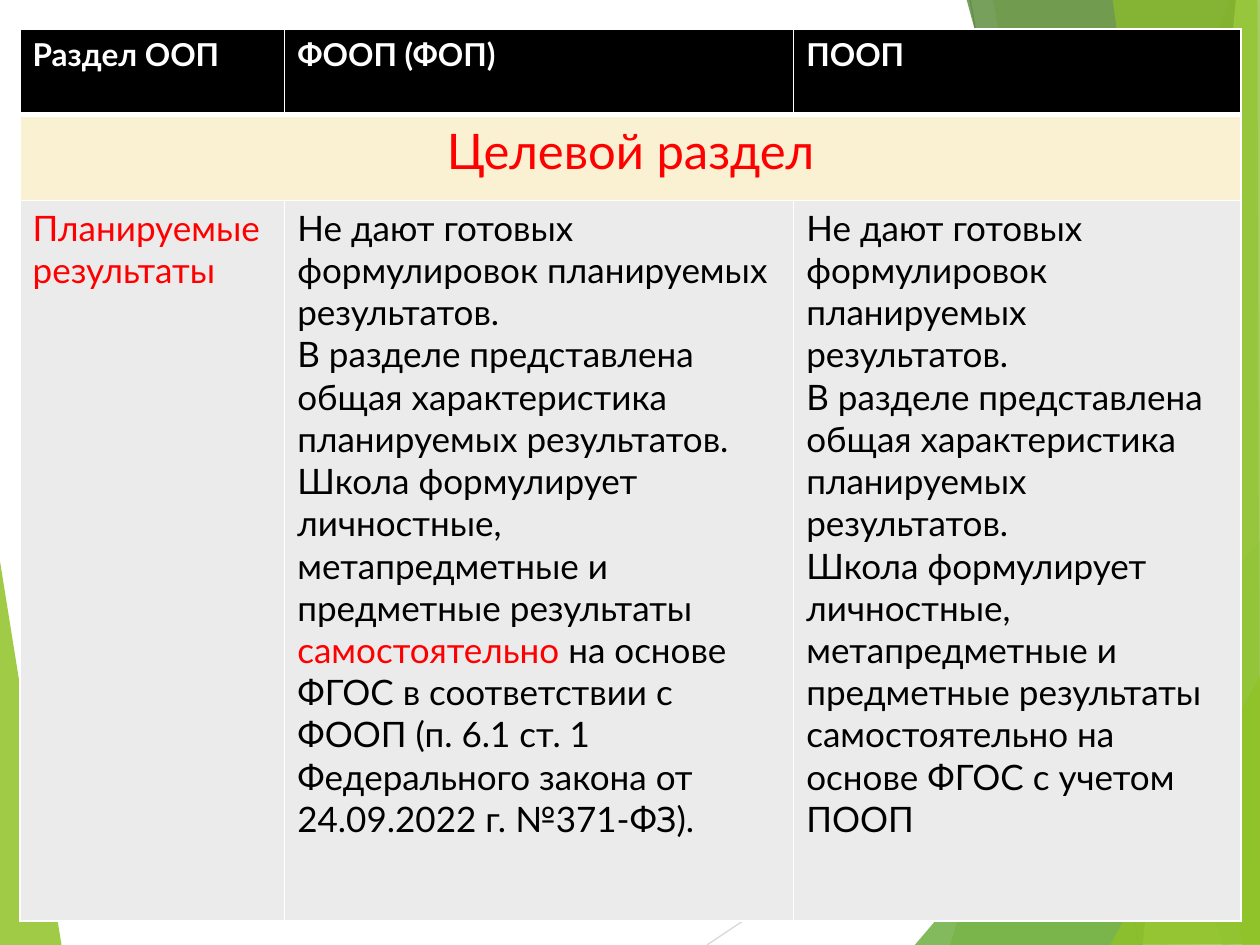
"""Build the slide comparing the target sections of two school programmes."""
from lxml import etree
from pptx import Presentation
from pptx.dml.color import RGBColor
from pptx.enum import shapes, text
from pptx.oxml import ns
from pptx.util import Inches, Pt

WHITE = RGBColor(0xFF, 0xFF, 0xFF)
BLACK = RGBColor(0, 0, 0)
RED = RGBColor(0xFF, 0, 0)
CREAM = RGBColor(0xFA, 0xF1, 0xD2)
PALE_GREY = RGBColor(0xEB, 0xEB, 0xEB)
LIGHT_GREY = RGBColor(0xD9, 0xD9, 0xD9)
MID_GREY = RGBColor(0xBF, 0xBF, 0xBF)
LIME = RGBColor(0x90, 0xC2, 0x26)
GREEN = RGBColor(0x54, 0xA0, 0x21)
DARK_GREEN = RGBColor(0x3F, 0x78, 0x19)
PALE_LIME = RGBColor(0xC0, 0xE4, 0x74)
FONT = "Lato"

LEFT_FACET = ([(-0.01, 4.39), (0.49, 7.51), (-0.01, 7.5)], LIME, 85)
GUIDES = [
    ((5.61, 7.5), (10.01, 4.57), LIGHT_GREY),
    ((7.7, 0), (9.04, 7.5), MID_GREY),
]
RIGHT_FACETS = [
    ([(9.75, 0), (7.54, 7.5), (10.02, 7.51), (10.01, 0.01)], LIME, 30),
    ([(7.88, -0.01), (9.19, 7.5), (10.01, 7.5), (10.01, -0.01)], LIME, 20),
    ([(7.26, 7.5), (10, 4.29), (10.01, 7.5)], GREEN, 72),
    ([(7.67, -0.01), (9.7, 7.5), (10.01, 7.49), (10.01, -0.01)], DARK_GREEN, 70),
    ([(9.81, -0.01), (9.07, 7.5), (10.01, 7.5), (10, -0.01)], PALE_LIME, 70),
    ([(8.83, -0.01), (9.86, 7.5), (10, 7.5), (9.98, -0.01)], LIME, 65),
    ([(8.81, 7.5), (10.01, 5.35), (10.01, 7.49)], LIME, 80),
]

COLUMNS = [2.1, 4.04, 3.55]
ROWS = [0.68, 0.68, 5.72]
HEADERS = ["Раздел ООП", "ФООП (ФОП)", "ПООП"]
SECTION = "Целевой раздел"
TOPIC = "Планируемые результаты"
COMMON = [
    [("Не дают готовых формулировок планируемых результатов.", BLACK)],
    [("В разделе представлена общая характеристика планируемых результатов.", BLACK)],
]
SCHOOL = "Школа формулирует личностные, метапредметные и предметные результаты "
FEDERAL = COMMON + [[
    (SCHOOL, BLACK),
    ("самостоятельно ", RED),
    ("на основе ФГОС в соответствии с ФООП (п. 6.1 ст. 1 Федерального закона "
     "от 24.09.2022 г. №371-ФЗ).", BLACK),
]]
EXEMPLARY = COMMON + [
    [(SCHOOL + "самостоятельно на основе ФГОС с учетом ПООП", BLACK)],
]


def add_facet(slide, points, color, opacity):
    corners = [(Inches(x), Inches(y)) for x, y in points]
    builder = slide.shapes.build_freeform(*corners[0])
    builder.add_line_segments(corners[1:], close=True)
    shape = builder.convert_to_shape()
    shape.shadow.inherit = False
    shape.line.fill.background()
    shape.fill.solid()
    shape.fill.fore_color.rgb = color
    color_element = next(shape.element.iter(ns.qn("a:srgbClr")))
    etree.SubElement(color_element, ns.qn("a:alpha"), val=str(opacity * 1000))


def add_guide(slide, start, end, color):
    connector = slide.shapes.add_connector(
        shapes.MSO_CONNECTOR.STRAIGHT, *map(Inches, start + end))
    connector.line.color.rgb = color
    connector.line.width = Pt(0.75)
    etree.SubElement(connector.element.spPr, ns.qn("a:effectLst"))


def set_borders(cell, bottom=1):
    properties = cell._tc.get_or_add_tcPr()
    for side, width in (("L", 1), ("R", 1), ("T", 1), ("B", bottom)):
        line = etree.SubElement(properties, ns.qn(f"a:ln{side}"), w=str(Pt(width)))
        fill = etree.SubElement(line, ns.qn("a:solidFill"))
        etree.SubElement(fill, ns.qn("a:srgbClr"), val=str(WHITE))


def fill_cell(cell, paragraphs, size, fill, bold=False, alignment=text.PP_ALIGN.LEFT):
    cell.fill.solid()
    cell.fill.fore_color.rgb = fill
    frame = cell.text_frame
    frame.text = "\n".join("" for _ in paragraphs)
    for paragraph, runs in zip(frame.paragraphs, paragraphs):
        paragraph.alignment = alignment
        for wording, color in runs:
            run = paragraph.add_run()
            run.text = wording
            run.font.name = FONT
            run.font.size = Pt(size)
            run.font.bold = bold
            run.font.color.rgb = color


def add_comparison(slide):
    table = slide.shapes.add_table(
        len(ROWS), len(COLUMNS), Inches(0.16), Inches(0.23),
        Inches(sum(COLUMNS)), Inches(sum(ROWS))).table
    for column, width in zip(table.columns, COLUMNS):
        column.width = Inches(width)
    for index, height in enumerate(ROWS):
        table.rows[index].height = Inches(height)
        for cell in table.rows[index].cells:
            set_borders(cell, bottom=3 if index == 0 else 1)
    for index, header in enumerate(HEADERS):
        fill_cell(table.cell(0, index), [[(header, WHITE)]], 18, BLACK, bold=True)
    table.cell(1, 0).merge(table.cell(1, len(COLUMNS) - 1))
    fill_cell(table.cell(1, 0), [[(SECTION, RED)]], 28, CREAM,
              alignment=text.PP_ALIGN.CENTER)
    for index, paragraphs in enumerate([[[(TOPIC, RED)]], FEDERAL, EXEMPLARY]):
        fill_cell(table.cell(2, index), paragraphs, 20, PALE_GREY)


def main():
    presentation = Presentation()
    presentation.slide_width = Inches(10)
    presentation.slide_height = Inches(7.5)
    slide = presentation.slides.add_slide(presentation.slide_layouts[6])
    add_facet(slide, *LEFT_FACET)
    for guide in GUIDES:
        add_guide(slide, *guide)
    for facet in RIGHT_FACETS:
        add_facet(slide, *facet)
    add_comparison(slide)
    presentation.save("out.pptx")


if __name__ == "__main__":
    main()
